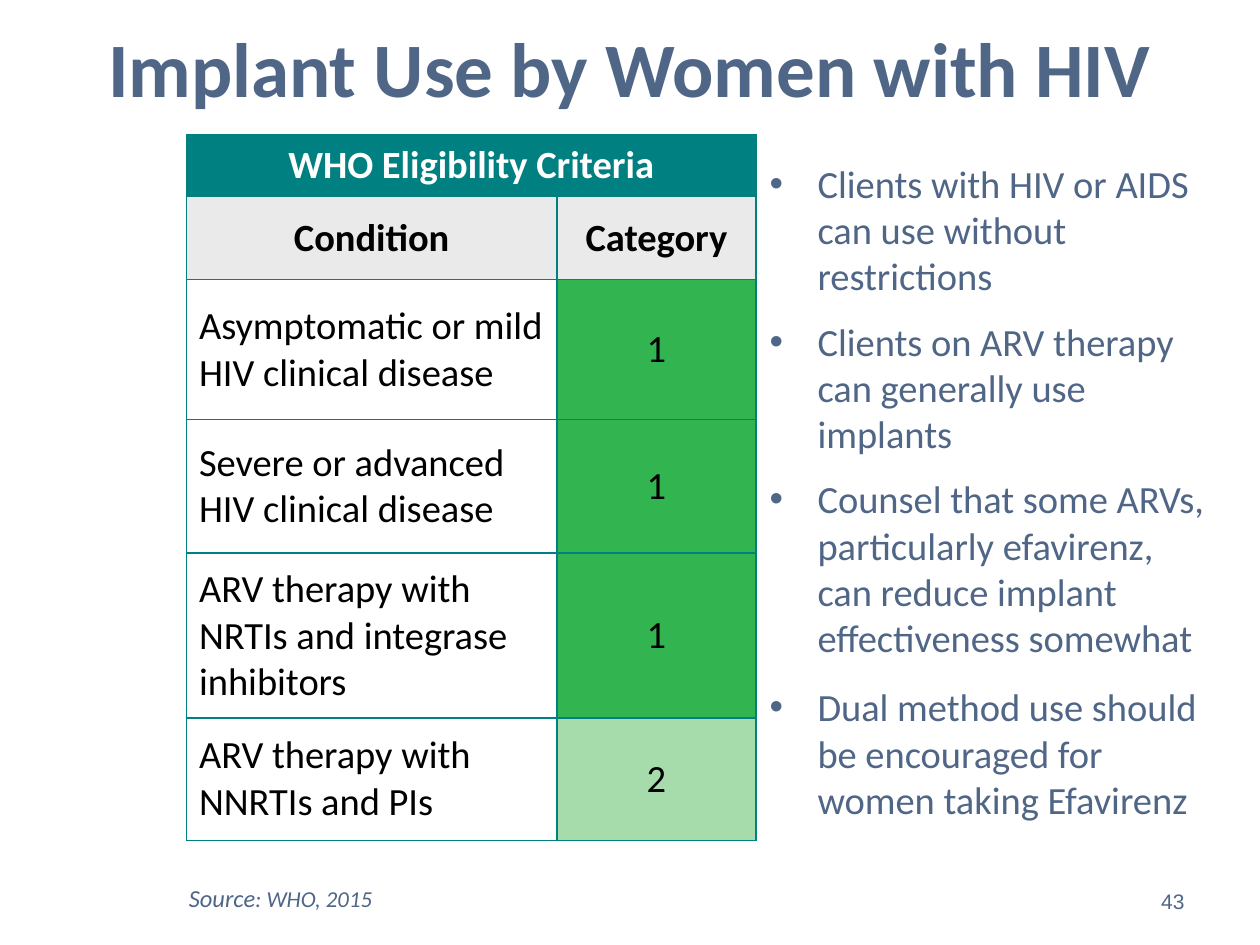
from lxml import etree
from pptx import Presentation
from pptx.dml.color import RGBColor
from pptx.enum import text
from pptx.oxml import ns
from pptx.util import Inches, Pt

SLATE, TEAL, GREY, GREEN, LIGHT_GREEN = "506687", "008080", "EAEAEA", "32B450", "A6DBAB"
LEFT, CENTER, RIGHT = text.PP_ALIGN.LEFT, text.PP_ALIGN.CENTER, text.PP_ALIGN.RIGHT
MIDDLE, TOP = text.MSO_ANCHOR.MIDDLE, text.MSO_ANCHOR.TOP


def color(value):
    return RGBColor.from_string(value)


def style(para, size, shade, align=LEFT, bold=False, italic=False, face="Calibri"):
    para.alignment = align
    for span in para.runs:
        span.font.name = face
        span.font.size = Pt(size)
        span.font.color.rgb = color(shade)
        span.font.bold = bold
        span.font.italic = italic


deck = Presentation()
deck.slide_width, deck.slide_height = Inches(10), Inches(7.5)
page = deck.slides.add_slide(deck.slide_layouts[6])

frames = []
for left, top, width, height, anchor, words in [
    (0.5, 0.09, 9, 0.88, MIDDLE, "Implant Use by Women with HIV"),
    (5.89, 1.22, 3.81, 5.63, TOP,
     "Clients with HIV or AIDS can use without restrictions\n"
     "Clients on ARV therapy can generally use implants\n"
     "Counsel that some ARVs, particularly efavirenz, can reduce implant effectiveness somewhat\n"
     "Dual method use should be encouraged for women taking Efavirenz"),
    (1.4, 7, 8.1, 0.5, TOP, "Source"),
    (7.17, 6.95, 2.33, 0.4, MIDDLE, "43"),
]:
    box = page.shapes.add_textbox(Inches(left), Inches(top), Inches(width), Inches(height))
    frame = box.text_frame
    frame.word_wrap = True
    frame.vertical_anchor = anchor
    frame.text = words
    frames.append(frame)
title, advice, source, number = frames

style(title.paragraphs[0], 44, SLATE, CENTER, bold=True)
style(number.paragraphs[0], 12, SLATE, RIGHT, face="Arial")

citation = source.paragraphs[0]
citation.line_spacing = 0.8
citation.add_run().text = ": WHO, 2015"
style(citation, 14, SLATE, italic=True)
citation.runs[1].font.size = Pt(13)

for para, gap in zip(advice.paragraphs, [0, 11, 11, 13.2]):
    layout = para._p.get_or_add_pPr()
    layout.set("marL", str(Inches(0.5)))
    layout.set("indent", str(Inches(-0.38)))
    bullet_color = etree.SubElement(layout, ns.qn("a:buClr"))
    etree.SubElement(bullet_color, ns.qn("a:srgbClr"), val=SLATE)
    etree.SubElement(layout, ns.qn("a:buFont"), typeface="Arial")
    etree.SubElement(layout, ns.qn("a:buChar"), char="•")
    para.space_before = Pt(gap)
    style(para, 22, SLATE)

criteria = [
    (0.49, "WHO Eligibility Criteria", "", TEAL),
    (0.66, "Condition", "Category", GREY),
    (1.11, "Asymptomatic or mild HIV clinical disease", "1", GREEN),
    (1.06, "Severe or advanced HIV clinical disease", "1", GREEN),
    (1.31, "ARV therapy with NRTIs and integrase inhibitors", "1", GREEN),
    (0.97, "ARV therapy with NNRTIs and PIs", "2", LIGHT_GREEN),
]
widths = [2.94, 1.58]
table = page.shapes.add_table(
    len(criteria), 2, Inches(1.48), Inches(1.07),
    Inches(sum(widths)), Inches(sum(entry[0] for entry in criteria))).table
for column, width in zip(table.columns, widths):
    column.width = Inches(width)
table.cell(0, 0).merge(table.cell(0, 1))

for row, (height, condition, category, fill) in enumerate(criteria):
    table.rows[row].height = Inches(height)
    heading = row < 2
    for col, words in enumerate([condition, category]):
        cell = table.cell(row, col)
        if words:
            cell.text_frame.text = words
        cell.vertical_anchor = MIDDLE
        cell.margin_left = cell.margin_right = Inches(0.1)
        cell.margin_top = cell.margin_bottom = Inches(0.05 if heading else 0.1)
        borders = cell._tc.get_or_add_tcPr()
        for edge in ("a:lnL", "a:lnR", "a:lnT", "a:lnB"):
            line = etree.SubElement(borders, ns.qn(edge), w=str(Pt(1)))
            paint = etree.SubElement(line, ns.qn("a:solidFill"))
            etree.SubElement(paint, ns.qn("a:srgbClr"), val=TEAL)
        if heading or col == 1:
            cell.fill.solid()
            cell.fill.fore_color.rgb = color(fill)
        else:
            cell.fill.background()
        style(cell.text_frame.paragraphs[0], 22, "FFFFFF" if row == 0 else "000000",
              CENTER if heading or col == 1 else LEFT, bold=heading)

deck.save("out.pptx")
